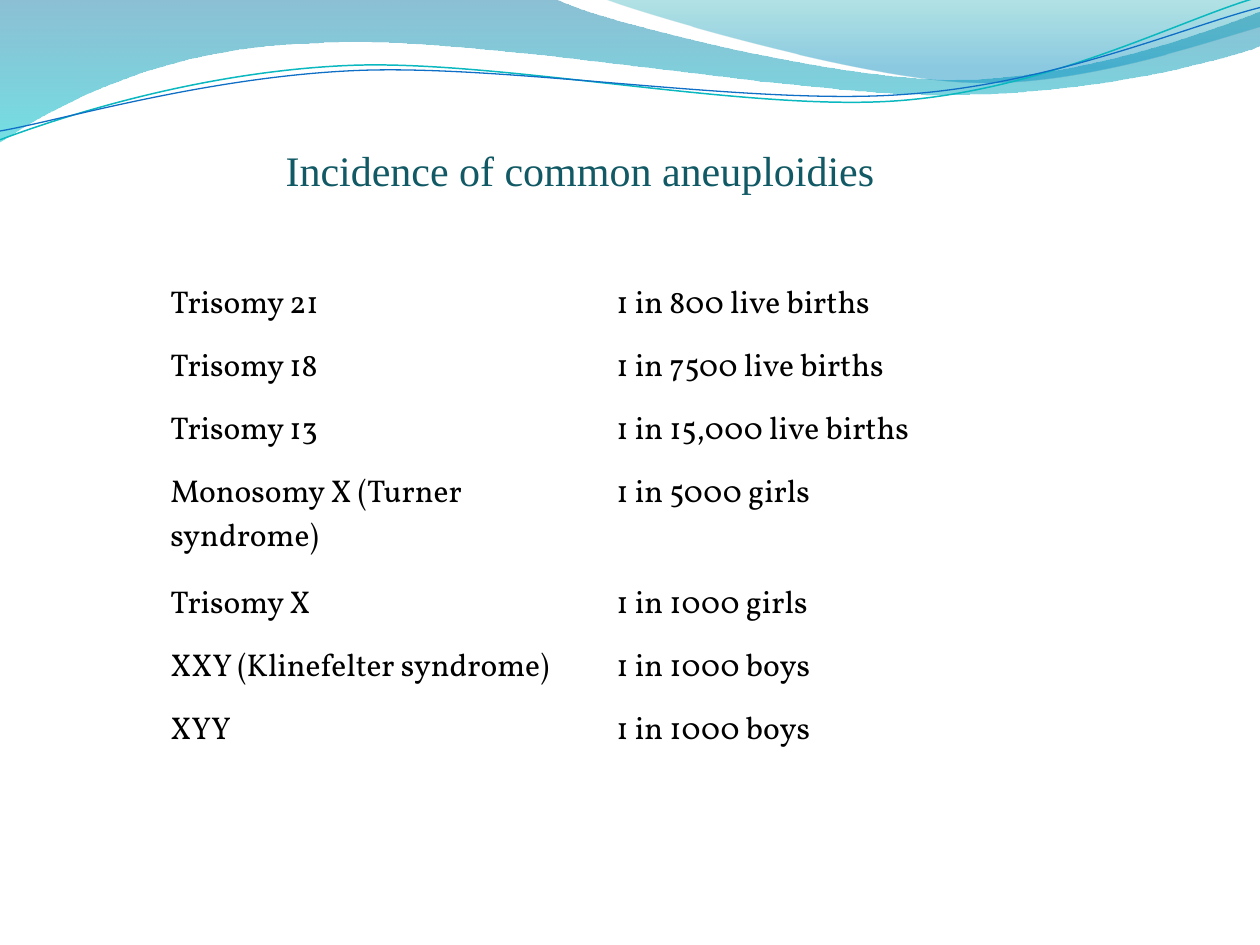
from lxml.etree import SubElement
from pptx import Presentation
from pptx.dml.color import RGBColor
from pptx.enum.text import MSO_ANCHOR, PP_ALIGN
from pptx.oxml.ns import qn
from pptx.util import Cm, Pt

UNIT = Cm(2.54)  # the wave outlines are drawn on a grid of 10 by 7.5 units

# A wave is a list of steps: (x, y) is a corner,
# (x1, y1, x2, y2, x, y) is a cubic curve ending at (x, y)
LEFT_WAVE = [
    (0, 0), (4.4, -0.01),
    (4.76, 0.17, 6.64, 0.63, 7.58, 0.63), (8.53, 0.63, 9.58, 0.26, 10, 0.09),
    (10.01, 0.36),
    (9.83, 0.44, 8.7, 0.76, 7.46, 0.75), (6.22, 0.75, 3.82, 0.28, 2.57, 0.34),
    (1.29, 0.36, 0.46, 0.83, -0.01, 1.13), (0, 0),
]
RIGHT_WAVE = [
    (4.79, -0.01),
    (5.09, 0.11, 6.82, 0.62, 7.69, 0.65), (8.56, 0.69, 9.61, 0.32, 10, 0.21),
    (10, 0), (4.79, -0.01),
]
TEAL_LINE = [
    (0, 1.11),
    (0.48, 0.93, 1.58, 0.57, 2.77, 0.52), (3.95, 0.47, 5.93, 0.89, 7.13, 0.8),
    (8.33, 0.71, 9.38, 0.15, 9.98, -0.02),
]
BLUE_LINE = [
    (0, 1.04),
    (0.47, 0.96, 1.64, 0.61, 2.83, 0.56), (4.03, 0.51, 5.97, 0.84, 7.17, 0.75),
    (8.36, 0.67, 9.41, 0.21, 10, 0.06),
]

INCIDENCES = [
    ("Trisomy 21", "1 in 800 live births"),
    ("Trisomy 18", "1 in 7500 live births"),
    ("Trisomy 13", "1 in 15,000 live births"),
    ("Monosomy X (Turner syndrome)", "1 in 5000 girls"),
    ("Trisomy X", "1 in 1000 girls"),
    ("XXY (Klinefelter syndrome)", "1 in 1000 boys"),
    ("XYY", "1 in 1000 boys"),
]
TURNER_ROW = 3  # its name takes two lines


def rgb(hex_colour):
    return RGBColor.from_string(hex_colour)


class SlideBuilder:
    TITLE_FONT, TITLE_COLOUR = "Times New Roman", "115964"
    BODY_FONT, BODY_COLOUR = "Vollkorn", "000000"

    def __init__(self, slide):
        self.slide = slide

    def style(self, paragraph, font, size, colour, alignment=PP_ALIGN.LEFT):
        paragraph.alignment = alignment
        paragraph.font.name = font
        paragraph.font.size = Pt(size)
        paragraph.font.color.rgb = rgb(colour)

    def outline(self, steps, close):
        start, *ends = [(x * UNIT, y * UNIT) for *_, x, y in steps]
        builder = self.slide.shapes.build_freeform(*start)
        builder.add_line_segments(ends, close=close)
        shape = builder.convert_to_shape()
        shape.shadow.inherit = False
        # Bend the straight segments that have control points
        segments = list(shape._element.spPr.iter(qn("a:lnTo")))
        for segment, (*controls, _, _) in zip(segments, steps[1:]):
            if controls:
                self.bend(shape, segment, controls)
        return shape

    def bend(self, shape, segment, controls):
        segment.addprevious(curve := segment.makeelement(qn("a:cubicBezTo")))
        for x, y in (controls[:2], controls[2:]):
            point = SubElement(curve, qn("a:pt"))
            point.set("x", str(round(x * UNIT) - shape.left))
            point.set("y", str(round(y * UNIT) - shape.top))
        curve.append(segment[0])
        segment.getparent().remove(segment)

    def wave(self, steps, stops):
        """Filled wave; each stop is (position, colour, opacity in percent)."""
        shape = self.outline(steps, close=True)
        shape.line.fill.background()
        shape.fill.gradient()
        shape.fill.gradient_angle = 270
        for stop, (position, colour, _) in zip(shape.fill.gradient_stops, stops):
            stop.position = position
            stop.color.rgb = rgb(colour)
        colours = shape._element.spPr.iter(qn("a:srgbClr"))
        for element, (_, _, opacity) in zip(colours, stops):
            SubElement(element, qn("a:alpha")).set("val", str(opacity * 1000))

    def wave_line(self, steps, colour, width):
        shape = self.outline(steps, close=False)
        shape.fill.background()
        shape.line.color.rgb = rgb(colour)
        shape.line.width = Pt(width)

    def title(self, text, left, top, width, height):
        title = self.slide.shapes.title
        title.left, title.top, title.width, title.height = left, top, width, height
        frame = title.text_frame
        frame.text = text
        frame.word_wrap = True
        frame.vertical_anchor = MSO_ANCHOR.TOP
        frame.margin_top, frame.margin_right = Cm(0.18), Cm(0.41)
        self.style(frame.paragraphs[0], self.TITLE_FONT, 24, self.TITLE_COLOUR,
                   PP_ALIGN.RIGHT)

    def table(self, rows, left, top, column_width, row_heights):
        columns = len(rows[0])
        table = self.slide.shapes.add_table(
            len(rows), columns, left, top, column_width * columns, sum(row_heights)).table
        table.first_row = table.horz_banding = False
        for row, texts, height in zip(table.rows, rows, row_heights):
            row.height = height
            for cell, text in zip(row.cells, texts):
                cell.fill.background()
                cell.text = text
                self.style(cell.text_frame.paragraphs[0], self.BODY_FONT, 18, self.BODY_COLOUR)


def main():
    deck = Presentation()
    deck.slide_width, deck.slide_height = Cm(25.4), Cm(19.05)
    page = SlideBuilder(deck.slides.add_slide(deck.slide_layouts[5]))

    # Waves across the top
    page.wave(LEFT_WAVE, [(0, "0074A1", 45), (1, "00C6CF", 55)])
    page.wave(RIGHT_WAVE, [(0, "00A1A9", 30), (0.8, "008BBF", 45)])
    page.wave_line(TEAL_LINE, "0AB8BF", 0.85)
    page.wave_line(BLUE_LINE, "0F6FC6", 0.75)

    # Title
    page.title("Incidence of common aneuploidies", Cm(0.64), Cm(2.74), Cm(17.4), Cm(2.06))

    # Incidence of each aneuploidy
    heights = [Cm(2.24) if i == TURNER_ROW else Cm(1.27) for i in range(len(INCIDENCES))]
    page.table(INCIDENCES, Cm(3.18), Cm(5.59), Cm(8.99), heights)

    deck.save("out.pptx")


if __name__ == "__main__":
    main()
